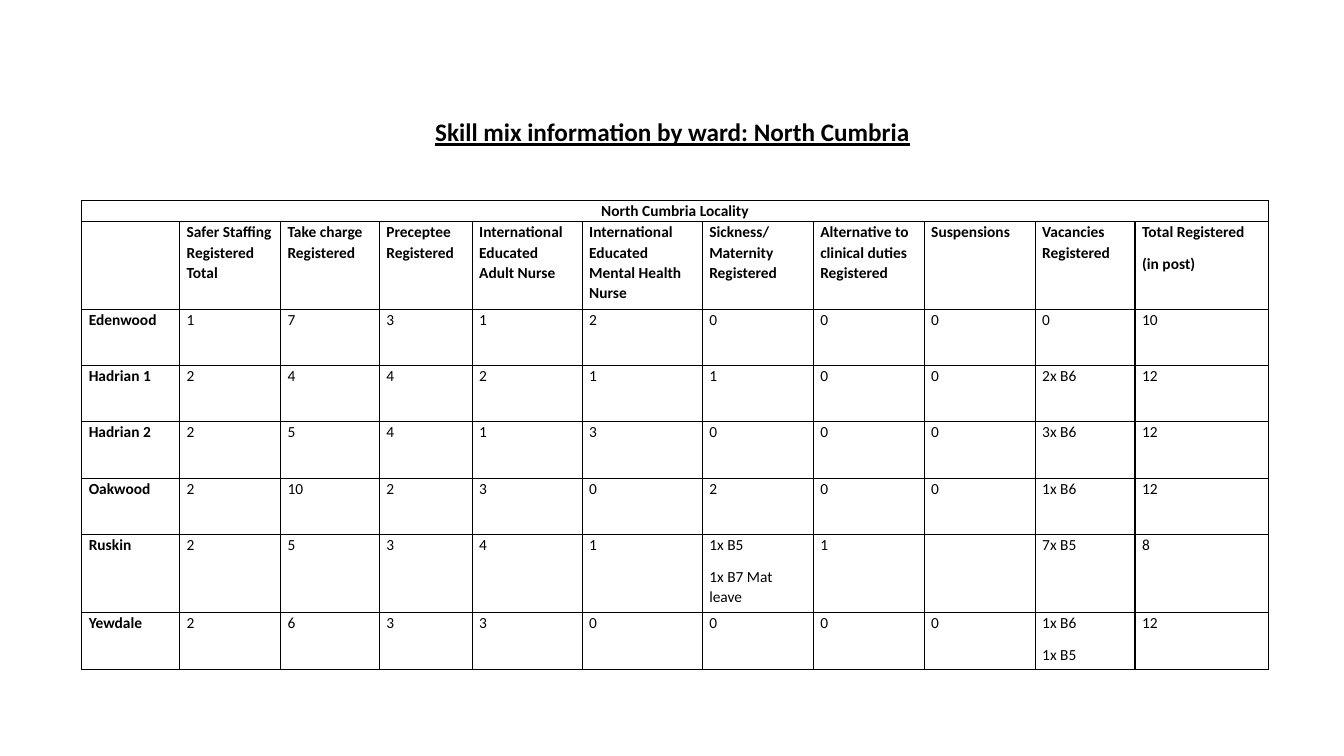
from lxml.etree import SubElement
from pptx import Presentation
from pptx.dml.color import RGBColor
from pptx.enum.text import MSO_ANCHOR, PP_ALIGN
from pptx.oxml.ns import qn
from pptx.util import Inches, Pt

BLACK = RGBColor(0x00, 0x00, 0x00)
SLIDE_WIDTH, SLIDE_HEIGHT = Inches(13.33), Inches(7.5)

# Boxes as percentages of the slide: left, top, width, height
TITLE_BOX = (6.9, 5.33, 86.27, 24.67)
TABLE_BOX = (6.08, 26.53, 88.3, 62)

# Relative sizes of the table's columns and rows
COLUMN_SHARES = [0.97, 1, 0.98, 0.92, 1.09, 1.19, 1.1, 1.1, 1.1, 0.99, 1.32]
ROW_SHARES = [0.21, 0.87, 0.56, 0.56, 0.56, 0.56, 0.78, 0.56]

TITLE_FONT = {"name": "Calibri", "size": Pt(18), "bold": True, "underline": True}
HEADING_FONT = {"name": "Calibri", "size": Pt(11), "bold": True}
VALUE_FONT = {**HEADING_FONT, "bold": False}
TITLE_PARAGRAPH = {"alignment": PP_ALIGN.CENTER, "line_spacing": 0.9}
CELL_PARAGRAPH = {"line_spacing": 1.07, "space_after": Pt(8)}
BANNER_PARAGRAPH = {**CELL_PARAGRAPH, "alignment": PP_ALIGN.CENTER}
CELL_FORMAT = {
    "margin_left": Inches(0.07), "margin_right": Inches(0.07),
    "margin_top": 0, "margin_bottom": 0, "vertical_anchor": MSO_ANCHOR.TOP,
}

TITLE = "Skill mix information by ward: North Cumbria"
BANNER = "North Cumbria Locality"
HEADINGS = [
    "", "Safer Staffing Registered Total", "Take charge Registered",
    "Preceptee Registered", "International Educated Adult Nurse",
    "International Educated Mental Health Nurse", "Sickness/ Maternity Registered",
    "Alternative to clinical duties Registered", "Suspensions",
    "Vacancies Registered", "Total Registered\n(in post)",
]
WARDS = [
    ["Edenwood", "1", "7", "3", "1", "2", "0", "0", "0", "0", "10"],
    ["Hadrian 1", "2", "4", "4", "2", "1", "1", "0", "0", "2x B6", "12"],
    ["Hadrian 2", "2", "5", "4", "1", "3", "0", "0", "0", "3x B6", "12"],
    ["Oakwood", "2", "10", "2", "3", "0", "2", "0", "0", "1x B6", "12"],
    ["Ruskin", "2", "5", "3", "4", "1", "1x B5\n1x B7 Mat leave", "1", "", "7x B5", "8"],
    ["Yewdale", "2", "6", "3", "3", "0", "0", "0", "0", "1x B6\n1x B5", "12"],
]


def place(box):
    """Turn percentages of the slide into lengths."""
    sizes = (SLIDE_WIDTH, SLIDE_HEIGHT) * 2
    return [round(size * share / 100) for size, share in zip(sizes, box)]


def apply_format(target, values):
    for name, value in values.items():
        setattr(target, name, value)


def write_text(text_frame, text, font_format, paragraph_format):
    text_frame.text = text
    for paragraph in text_frame.paragraphs:
        apply_format(paragraph, paragraph_format)
        for font in [paragraph.font] + [run.font for run in paragraph.runs]:
            apply_format(font, font_format)
            font.color.rgb = BLACK


def add_borders(cell):
    properties = cell._tc.get_or_add_tcPr()
    for side in ("a:lnL", "a:lnR", "a:lnT", "a:lnB"):
        line = SubElement(properties, qn(side), w=str(Pt(1)))
        fill = SubElement(line, qn("a:solidFill"))
        SubElement(fill, qn("a:srgbClr"), val=str(BLACK))


def add_title(slide, box):
    text_frame = slide.shapes.add_textbox(*place(box)).text_frame
    apply_format(text_frame, {"word_wrap": True, "vertical_anchor": MSO_ANCHOR.MIDDLE})
    write_text(text_frame, TITLE, TITLE_FONT, TITLE_PARAGRAPH)


def add_ward_table(slide, box):
    left, top, width, height = place(box)
    table = slide.shapes.add_table(
        len(ROW_SHARES), len(COLUMN_SHARES), left, top, width, height
    ).table
    apply_format(table, {"first_row": False, "horz_banding": False})
    for column, share in zip(table.columns, COLUMN_SHARES):
        column.width = round(width * share / sum(COLUMN_SHARES))
    for row, share in zip(table.rows, ROW_SHARES):
        row.height = round(height * share / sum(ROW_SHARES))

    # Borders and plain background
    for cell in table.iter_cells():
        apply_format(cell, CELL_FORMAT)
        add_borders(cell)
        cell.fill.background()

    # Locality banner across all columns
    banner = table.cell(0, 0)
    banner.merge(table.cell(0, len(COLUMN_SHARES) - 1))
    write_text(banner.text_frame, BANNER, HEADING_FONT, BANNER_PARAGRAPH)

    # Headings and ward figures
    for row_index, texts in enumerate([HEADINGS] + WARDS, start=1):
        for column_index, text in enumerate(texts):
            is_heading = row_index == 1 or column_index == 0
            font_format = HEADING_FONT if is_heading else VALUE_FONT
            cell = table.cell(row_index, column_index)
            write_text(cell.text_frame, text, font_format, CELL_PARAGRAPH)


def main():
    presentation = Presentation()
    presentation.slide_width, presentation.slide_height = SLIDE_WIDTH, SLIDE_HEIGHT
    slide = presentation.slides.add_slide(presentation.slide_layouts[6])
    add_title(slide, TITLE_BOX)
    add_ward_table(slide, TABLE_BOX)
    presentation.save("out.pptx")


if __name__ == "__main__":
    main()
